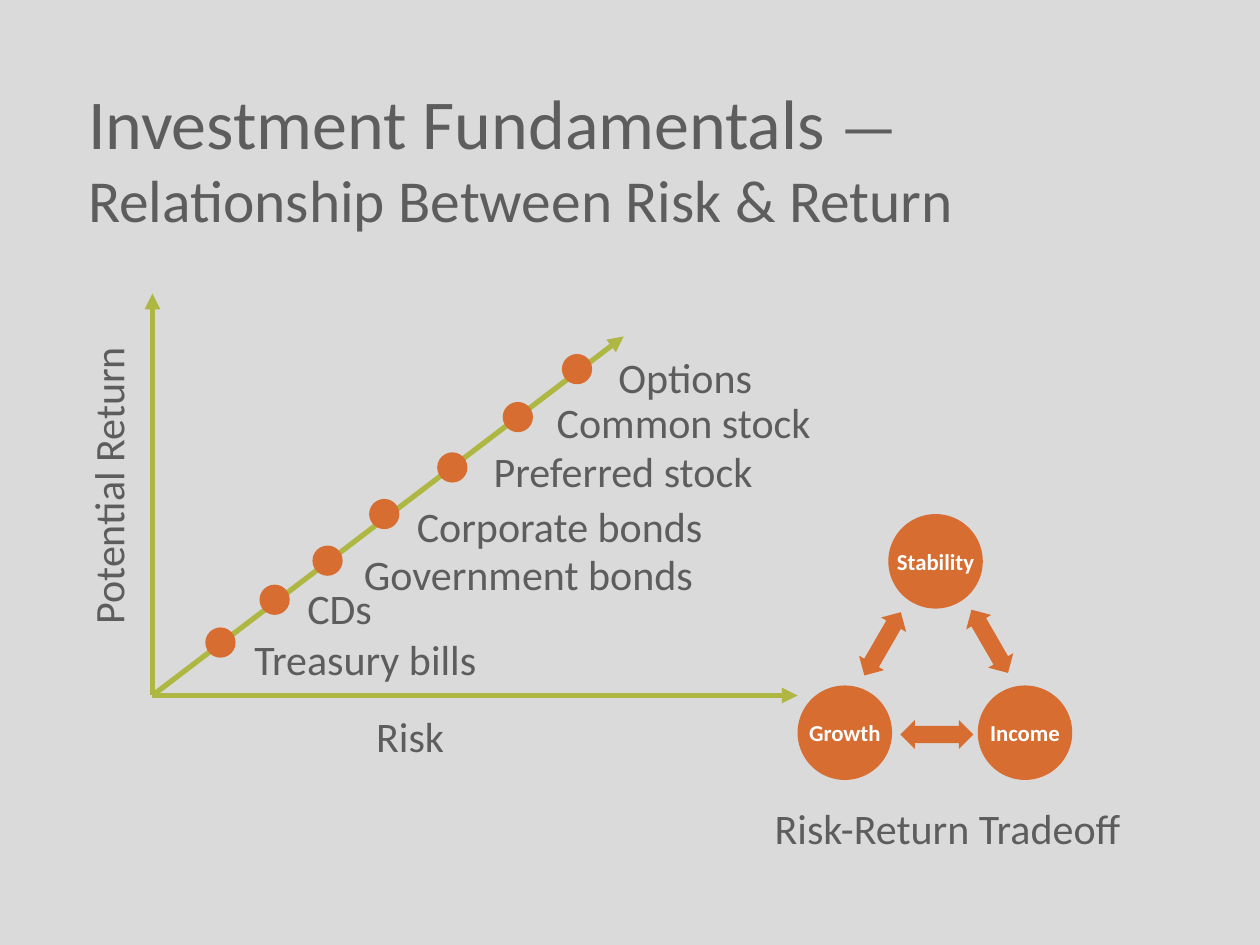
import dataclasses

import pptx
import pptx.dml.color
import pptx.enum.shapes
import pptx.enum.text
import pptx.util
from lxml import etree
from pptx.oxml.ns import qn

Inches = pptx.util.Inches
Align = pptx.enum.text.PP_ALIGN
Anchor = pptx.enum.text.MSO_ANCHOR
Shape = pptx.enum.shapes.MSO_SHAPE


@dataclasses.dataclass(frozen=True)
class Theme:
    font: str = "Calibri"
    background: str = "DADADA"
    text: str = "5D5D5D"
    accent: str = "D76D31"
    axis: str = "AFB743"
    light: str = "FFFFFF"
    title_size: int = 40
    dash_size: int = 36
    subtitle_size: int = 34
    label_size: int = 24
    circle_size: int = 13
    axis_width: int = 3


THEME = Theme()

ORIGIN = (1.21, 5.52)
AXIS_ENDS = [(6.33, 5.52), (1.21, 2.33), (4.95, 2.67)]
DOT_SIZE = 0.24
CIRCLE_SIZE = 0.75
LABEL_HEIGHT = 0.51

# Name, dot left and top, label left and top, from low risk to high
INVESTMENTS = [
    ("Treasury bills", (1.63, 4.98), (1.92, 4.98)),
    ("CDs", (2.06, 4.64), (2.34, 4.57)),
    ("Government bonds", (2.48, 4.33), (2.79, 4.3)),
    ("Corporate bonds", (2.93, 3.96), (3.21, 3.92)),
    ("Preferred stock", (3.47, 3.59), (3.82, 3.49)),
    ("Common stock", (3.99, 3.19), (4.32, 3.1)),
    ("Options", (4.46, 2.81), (4.81, 2.74)),
]
GOALS = [("Stability", 7.05, 4.08), ("Growth", 6.33, 5.44), ("Income", 7.76, 5.44)]
# Left, top, rotation, head length
GOAL_ARROWS = [(7.32, 5.54, 90, 0.6), (7.74, 4.8, 150, 0.58), (6.89, 4.82, 30, 0.58)]


def rgb(value):
    return pptx.dml.color.RGBColor.from_string(value)


def write(para, text, size=THEME.label_size, color=THEME.text, bold=False):
    span = para.add_run()
    span.text = text
    span.font.name = THEME.font
    span.font.size = pptx.util.Pt(size)
    span.font.bold = bold
    span.font.color.rgb = rgb(color)


def add_box(page, left, top, width, height, anchor=Anchor.TOP):
    box = page.shapes.add_textbox(Inches(left), Inches(top), Inches(width), Inches(height))
    box.text_frame.word_wrap = True
    box.text_frame.vertical_anchor = anchor
    return box


def add_label(page, text, left, top, width, height=LABEL_HEIGHT, align=Align.LEFT, rotation=0):
    box = add_box(page, left, top, width, height)
    box.rotation = rotation
    para = box.text_frame.paragraphs[0]
    para.alignment = align
    write(para, text)


def add_title(page):
    box = add_box(page, 0.6, 0.58, 7.99, 1.33, Anchor.MIDDLE)
    para = box.text_frame.paragraphs[0]
    write(para, "Investment Fundamentals ", size=THEME.title_size)
    write(para, "—", size=THEME.dash_size)
    para.add_line_break()
    write(para, "Relationship Between Risk & Return", size=THEME.subtitle_size)


def add_arrow(page, start, end):
    arrow = page.shapes.add_connector(
        pptx.enum.shapes.MSO_CONNECTOR.STRAIGHT, *map(Inches, start + end))
    arrow.line.color.rgb = rgb(THEME.axis)
    arrow.line.width = pptx.util.Pt(THEME.axis_width)
    etree.SubElement(arrow.line._get_or_add_ln(), qn("a:tailEnd"), type="triangle")
    etree.SubElement(arrow._element.spPr, qn("a:effectLst"))


def add_solid(page, kind, left, top, width, height):
    """Add a preset shape in the accent colour, without outline or shadow."""
    shape = page.shapes.add_shape(
        kind, Inches(left), Inches(top), Inches(width), Inches(height))
    shape.shadow.inherit = False
    shape.fill.solid()
    shape.fill.fore_color.rgb = rgb(THEME.accent)
    shape.line.fill.background()
    return shape


def add_goal(page, text, left, top):
    circle = add_solid(page, Shape.OVAL, left, top, CIRCLE_SIZE, CIRCLE_SIZE)
    frame = circle.text_frame
    frame.word_wrap = False
    frame.vertical_anchor = Anchor.MIDDLE
    para = frame.paragraphs[0]
    para.alignment = Align.CENTER
    write(para, text, size=THEME.circle_size, color=THEME.light, bold=True)


def add_risk_chart(page):
    add_label(page, "Risk", 1.56, 5.59, 3.39, align=Align.CENTER)
    add_label(page, "Potential Return", -0.5, 3.44, 2.72, rotation=270)
    for end in AXIS_ENDS:
        add_arrow(page, ORIGIN, end)
    for name, dot, label in INVESTMENTS:
        add_solid(page, Shape.OVAL, *dot, DOT_SIZE, DOT_SIZE)
        add_label(page, name, *label, 1.09 if name == "CDs" else 2.9)


def add_tradeoff(page):
    for goal in GOALS:
        add_goal(page, *goal)
    for left, top, rotation, head in GOAL_ARROWS:
        arrow = add_solid(page, Shape.UP_DOWN_ARROW, left, top, 0.23, 0.58)
        arrow.rotation = rotation
        arrow.adjustments[0] = 0.5
        arrow.adjustments[1] = head
    add_label(page, "Risk-Return Tradeoff", 5.99, 6.32, 3.06, align=Align.CENTER)


def main():
    deck = pptx.Presentation()
    deck.slide_width = Inches(10)
    deck.slide_height = Inches(7.5)
    page = deck.slides.add_slide(deck.slide_layouts[6])
    page.background.fill.solid()
    page.background.fill.fore_color.rgb = rgb(THEME.background)
    add_title(page)
    add_risk_chart(page)
    add_tradeoff(page)
    deck.save("out.pptx")


if __name__ == "__main__":
    main()
